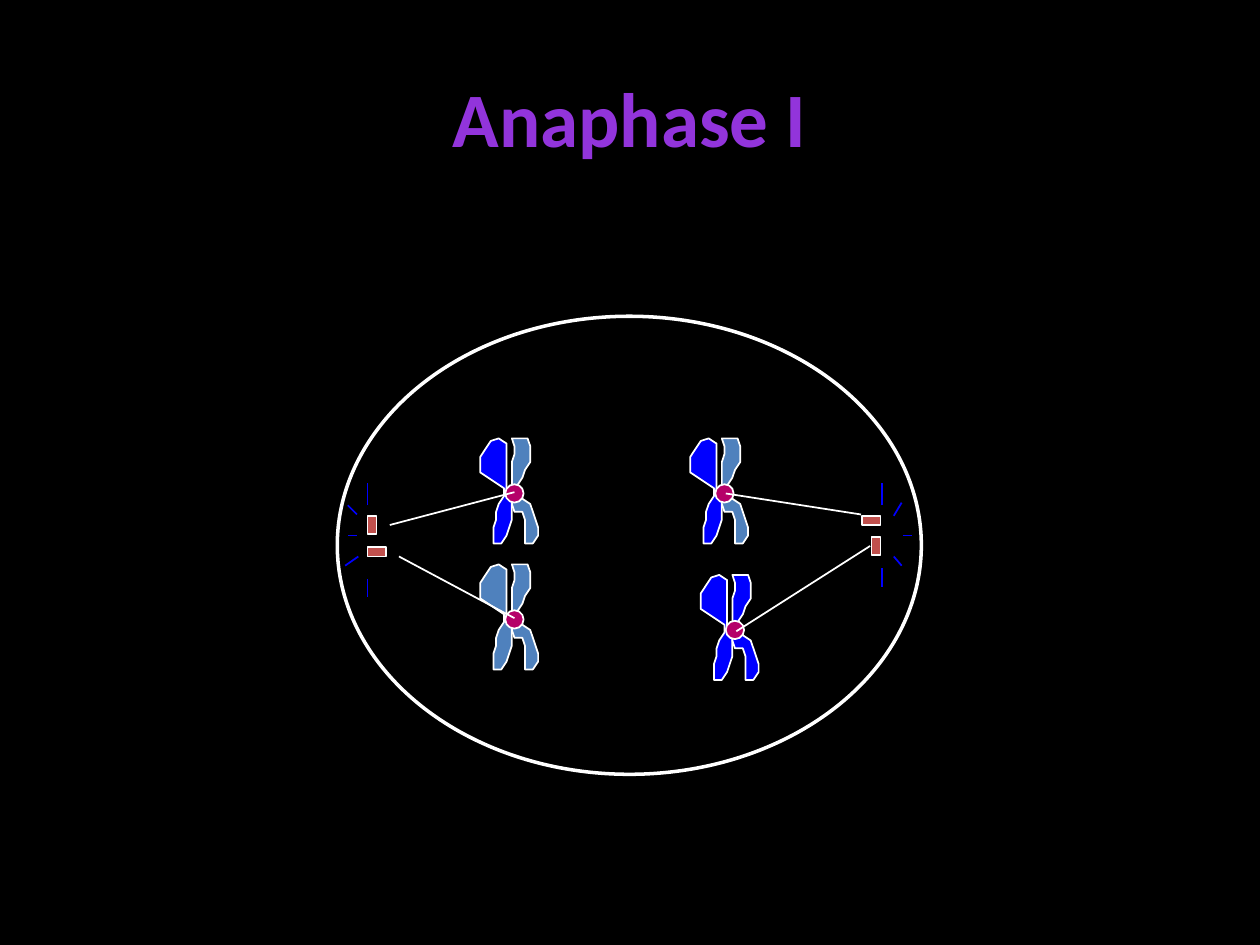
from dataclasses import dataclass

from lxml import etree
from pptx import Presentation
from pptx.dml.color import RGBColor
from pptx.enum.shapes import MSO_CONNECTOR, MSO_SHAPE
from pptx.enum.text import MSO_ANCHOR, PP_ALIGN
from pptx.oxml.ns import qn
from pptx.util import Emu, Pt

STRAIGHT = MSO_CONNECTOR.STRAIGHT
OVAL = MSO_SHAPE.OVAL
RECTANGLE = MSO_SHAPE.RECTANGLE
CENTER = PP_ALIGN.CENTER
MIDDLE = MSO_ANCHOR.MIDDLE

EMU_PER_PX = 9525
CHROMATID_UNIT = 2


@dataclass(frozen=True)
class Theme:
    background: str = "000000"
    outline: str = "FFFFFF"
    title: str = "9234DB"
    centriole: str = "C0504D"
    centromere: str = "B50069"
    maternal: str = "4F81BD"
    paternal: str = "0000FF"
    aster: str = "0000FF"
    font: str = "Calibri"
    title_size: int = 44
    thin: int = 1
    thick: int = 2


THEME = Theme()

LEFT_CHROMATID = [
    (13, 21), (10, 20), (10, 17), (10, 14), (10, 11), (10, 8), (10, 5), (10, 2),
    (7, 0), (4, 1), (2, 4), (0, 7), (0, 10), (0, 13), (3, 15), (6, 17), (9, 19),
    (9, 22), (7, 25), (6, 28), (6, 31), (5, 34), (5, 37), (5, 40), (8, 40),
    (10, 37), (11, 34), (12, 31), (12, 28), (12, 25), (12, 22),
]
RIGHT_CHROMATID = [
    (13, 21), (12, 18), (12, 15), (12, 12), (12, 9), (13, 6), (13, 3), (12, 0),
    (15, 0), (18, 0), (19, 3), (19, 6), (19, 9), (17, 12), (16, 15), (14, 18),
    (13, 21), (16, 23), (19, 25), (20, 28), (21, 31), (22, 34), (22, 37),
    (20, 40), (17, 40), (17, 37), (17, 34), (17, 31), (16, 28), (13, 28),
    (12, 25), (12, 22),
]
CENTRIOLES = [(664, 409, 7, 14), (280, 393, 7, 14), (657, 393, 14, 7), (280, 417, 14, 7)]
CHROMOSOMES = [
    (366, 430, THEME.maternal, THEME.maternal),
    (526, 334, THEME.paternal, THEME.maternal),
    (366, 334, THEME.paternal, THEME.maternal),
    (534, 438, THEME.paternal, THEME.paternal),
]
ASTER_RAYS = [
    (273, 424, 263, 431), (265, 408, 272, 408), (265, 385, 272, 392),
    (280, 385, 280, 368), (280, 441, 280, 455),
    (672, 385, 672, 368), (681, 393, 687, 383), (688, 408, 695, 408),
    (681, 424, 687, 431), (672, 433, 672, 447),
]
SPINDLE_FIBERS = [
    (297, 400, 392, 375), (304, 424, 392, 471),
    (553, 376, 656, 392), (561, 481, 663, 416),
]


def px(length):
    return Emu(length * EMU_PER_PX)


def rgb(color):
    return RGBColor.from_string(color)


class CellDiagram:
    def __init__(self, slide, theme):
        self.slide = slide
        self.theme = theme
        slide.background.fill.solid()
        slide.background.fill.fore_color.rgb = rgb(theme.background)

    def title(self, text, *box):
        frame = self.slide.shapes.add_textbox(*map(px, box)).text_frame
        frame.word_wrap = True
        frame.vertical_anchor = MIDDLE
        frame.text = text
        heading = frame.paragraphs[0]
        heading.alignment = CENTER
        font = heading.runs[0].font
        font.name = self.theme.font
        font.size = Pt(self.theme.title_size)
        font.bold = True
        font.color.rgb = rgb(self.theme.title)

    def paint(self, body, fill, weight):
        body.shadow.inherit = False
        body.fill.solid()
        body.fill.fore_color.rgb = rgb(fill)
        body.line.color.rgb = rgb(self.theme.outline)
        body.line.width = Pt(weight)

    def shape(self, kind, box, fill, weight=THEME.thin):
        self.paint(self.slide.shapes.add_shape(kind, *map(px, box)), fill, weight)

    def chromatid(self, left, top, outline, fill):
        builder = self.slide.shapes.build_freeform(*outline[0], scale=px(CHROMATID_UNIT))
        builder.add_line_segments(outline[1:], close=True)
        self.paint(builder.convert_to_shape(px(left), px(top)), fill, self.theme.thin)

    def chromosome(self, left, top, left_fill, right_fill):
        self.chromatid(left, top, LEFT_CHROMATID, left_fill)
        self.chromatid(left, top, RIGHT_CHROMATID, right_fill)
        self.shape(OVAL, (left + 19, top + 35, 14, 14), self.theme.centromere)

    def line(self, ends, color):
        fiber = self.slide.shapes.add_connector(STRAIGHT, *map(px, ends))
        fiber.line.color.rgb = rgb(color)
        fiber.line.width = Pt(self.theme.thin)
        etree.SubElement(fiber._element.spPr, qn("a:effectLst"))


def main():
    deck = Presentation()
    deck.slide_width, deck.slide_height = px(960), px(720)
    diagram = CellDiagram(deck.slides.add_slide(deck.slide_layouts[6]), THEME)

    diagram.title("Anaphase I", 48, 29, 864, 120)
    diagram.shape(OVAL, (257, 241, 445, 349), THEME.background, THEME.thick)
    for centriole in CENTRIOLES:
        diagram.shape(RECTANGLE, centriole, THEME.centriole)
    for chromosome in CHROMOSOMES:
        diagram.chromosome(*chromosome)
    for ray in ASTER_RAYS:
        diagram.line(ray, THEME.aster)
    for fiber in SPINDLE_FIBERS:
        diagram.line(fiber, THEME.outline)

    deck.save("out.pptx")


if __name__ == "__main__":
    main()
